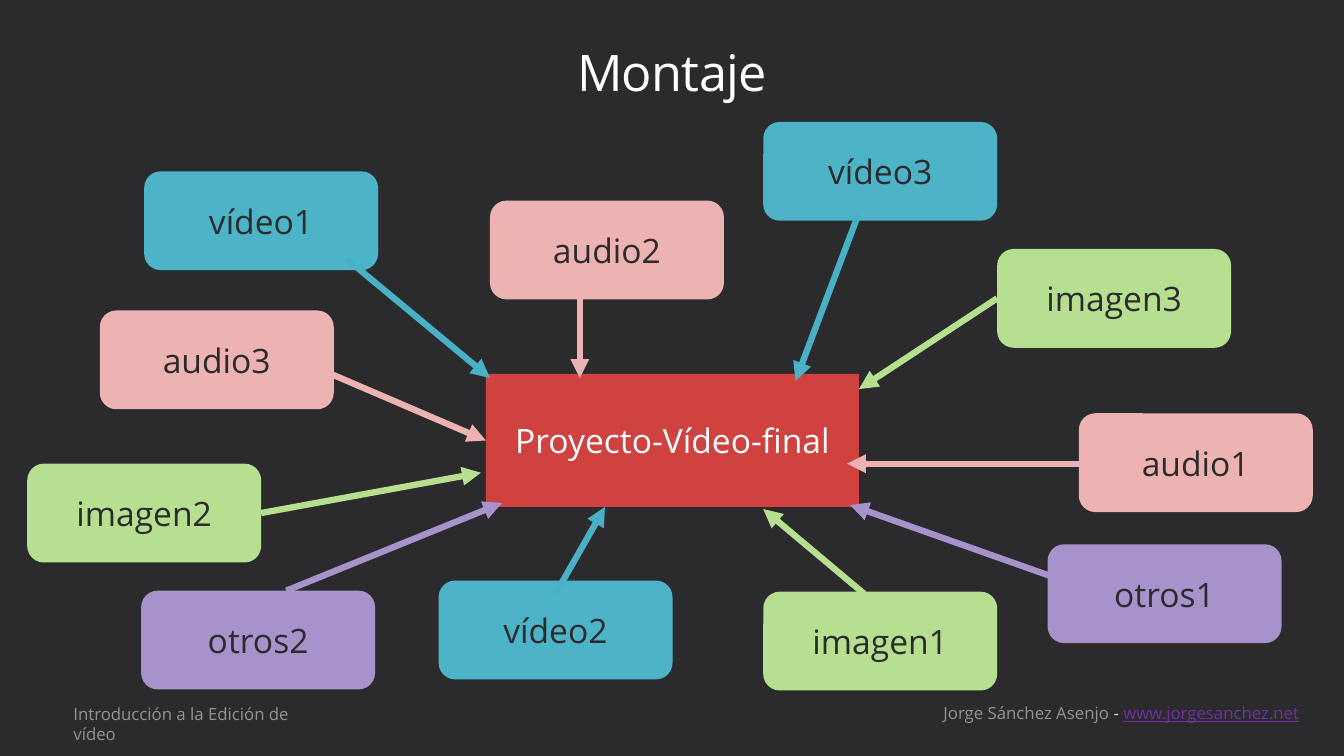
from dataclasses import dataclass

from lxml.etree import SubElement
from pptx import Presentation
from pptx.dml.color import RGBColor
from pptx.enum.shapes import MSO_CONNECTOR as Connector, MSO_SHAPE as Preset
from pptx.enum.text import MSO_ANCHOR as Anchor, PP_ALIGN as Align
from pptx.oxml.ns import qn
from pptx.slide import Slide
from pptx.util import Inches, Pt

FONT = "Open Sans"
DARK = RGBColor(0x2B, 0x2B, 0x2D)
WHITE = RGBColor(0xFF, 0xFF, 0xFF)
GREY = RGBColor(0x93, 0x93, 0x98)
LIGHT_GREY = RGBColor(0xD9, 0xD9, 0xD9)
LINK_PURPLE = RGBColor(0x70, 0x30, 0xA0)
RED = RGBColor(0xCF, 0x42, 0x3F)
BLUE = RGBColor(0x4D, 0xB3, 0xC7)
ARROW_BLUE = RGBColor(0x48, 0xB1, 0xC6)
PINK = RGBColor(0xEC, 0xB3, 0xB2)
GREEN = RGBColor(0xB6, 0xDF, 0x90)
PURPLE = RGBColor(0xA8, 0x92, 0xCB)

Point = tuple[float, float]
CLIP_SIZE: Point = (2.32, 0.98)


@dataclass
class Clip:
    """A source file and the arrow that takes it into the project."""
    label: str
    fill: RGBColor
    corner: Point
    start: Point
    end: Point


@dataclass
class Span:
    text: str
    color: RGBColor
    underline: bool = False


CLIPS = [
    Clip("vídeo1", BLUE, (1.43, 1.7), (3.44, 2.57), (4.86, 3.75)),
    Clip("vídeo2", BLUE, (4.35, 5.76), (5.51, 5.89), (6, 5.03)),
    Clip("vídeo3", BLUE, (7.57, 1.21), (8.52, 2.11), (7.89, 3.78)),
    Clip("audio1", PINK, (10.7, 4.1), (10.92, 4.6), (8.4, 4.6)),
    Clip("audio2", PINK, (4.86, 1.99), (5.75, 2.96), (5.75, 3.75)),
    Clip("audio3", PINK, (0.99, 3.08), (3.26, 3.7), (4.82, 4.37)),
    Clip("imagen1", GREEN, (7.57, 5.87), (8.57, 5.89), (7.57, 5.05)),
    Clip("imagen2", GREEN, (0.27, 4.6), (2.59, 5.09), (4.77, 4.69)),
    Clip("imagen3", GREEN, (9.89, 2.47), (9.89, 2.96), (8.52, 3.86)),
    Clip("otros1", PURPLE, (10.39, 5.4), (10.49, 5.74), (8.43, 5.01)),
    Clip("otros2", PURPLE, (1.4, 5.86), (2.84, 5.86), (4.98, 4.99)),
]


def add_block(page: Slide, preset: Preset, corner: Point, size: Point,
              fill: RGBColor, label: str, color: RGBColor) -> None:
    box = page.shapes.add_shape(preset, *map(Inches, corner + size))
    box.shadow.inherit = False
    box.fill.solid()
    box.fill.fore_color.rgb = fill
    box.line.fill.background()
    box.text_frame.text = label
    box.text_frame.vertical_anchor = Anchor.MIDDLE
    para = box.text_frame.paragraphs[0]
    para.alignment = Align.CENTER
    font = para.runs[0].font
    font.name, font.size, font.color.rgb = FONT, Pt(24), color


def add_arrow(page: Slide, start: Point, end: Point, color: RGBColor) -> None:
    arrow = page.shapes.add_connector(Connector.STRAIGHT, *map(Inches, start + end))
    arrow.line.color.rgb = color
    arrow.line.width = Pt(4.5)
    SubElement(arrow.line._get_or_add_ln(), qn("a:tailEnd"), type="triangle")
    SubElement(arrow._element.spPr, qn("a:effectLst"))


def add_text(page: Slide, corner: Point, size: Point, spans: list[Span], points: float,
             align: Align, anchor: Anchor, inset: Point):
    box = page.shapes.add_textbox(*map(Inches, corner + size))
    frame = box.text_frame
    frame.word_wrap = True
    frame.vertical_anchor = anchor
    frame.margin_left = frame.margin_right = Inches(inset[0])
    frame.margin_top = frame.margin_bottom = Inches(inset[1])
    para = frame.paragraphs[0]
    para.alignment = align
    for span in spans:
        run = para.add_run()
        run.text = span.text
        font = run.font
        font.name, font.size, font.color.rgb = FONT, Pt(points), span.color
        if span.underline:
            font.underline = True
    return para


def main() -> None:
    deck = Presentation()
    deck.slide_width, deck.slide_height = Inches(13.33), Inches(7.5)
    page = deck.slides.add_slide(deck.slide_layouts[6])
    page.background.fill.solid()
    page.background.fill.fore_color.rgb = DARK

    # Footer
    author = [Span("Jorge Sánchez Asenjo ", GREY), Span("- ", LIGHT_GREY),
              Span("www.jorgesanchez.net", LINK_PURPLE, underline=True), Span(" ", GREY)]
    credit = add_text(page, (5.24, 6.9), (7.82, 0.34), author, 12,
                      Align.RIGHT, Anchor.MIDDLE, (0.13, 0.07))
    credit.space_before = Pt(6)
    add_text(page, (0.63, 6.93), (2.74, 0.3),
             [Span("Introducción a la Edición de vídeo", GREY)], 12,
             Align.LEFT, Anchor.TOP, (0.1, 0.05))

    # Title
    title = add_text(page, (1, 0.31), (11.33, 0.89), [Span("Montaje", WHITE)], 36,
                     Align.CENTER, Anchor.MIDDLE, (0, 0))
    title.line_spacing = 0.86
    title.runs[0].font._element.set("spc", "-50")

    # Source clips around the final project
    for clip in CLIPS:
        add_block(page, Preset.ROUNDED_RECTANGLE, clip.corner, CLIP_SIZE,
                  clip.fill, clip.label, DARK)
    add_block(page, Preset.RECTANGLE, (4.82, 3.71), (3.7, 1.32),
              RED, "Proyecto-Vídeo-final", WHITE)

    # Arrows into the project
    for clip in CLIPS:
        color = ARROW_BLUE if clip.fill == BLUE else clip.fill
        add_arrow(page, clip.start, clip.end, color)

    deck.save("out.pptx")


if __name__ == "__main__":
    main()
